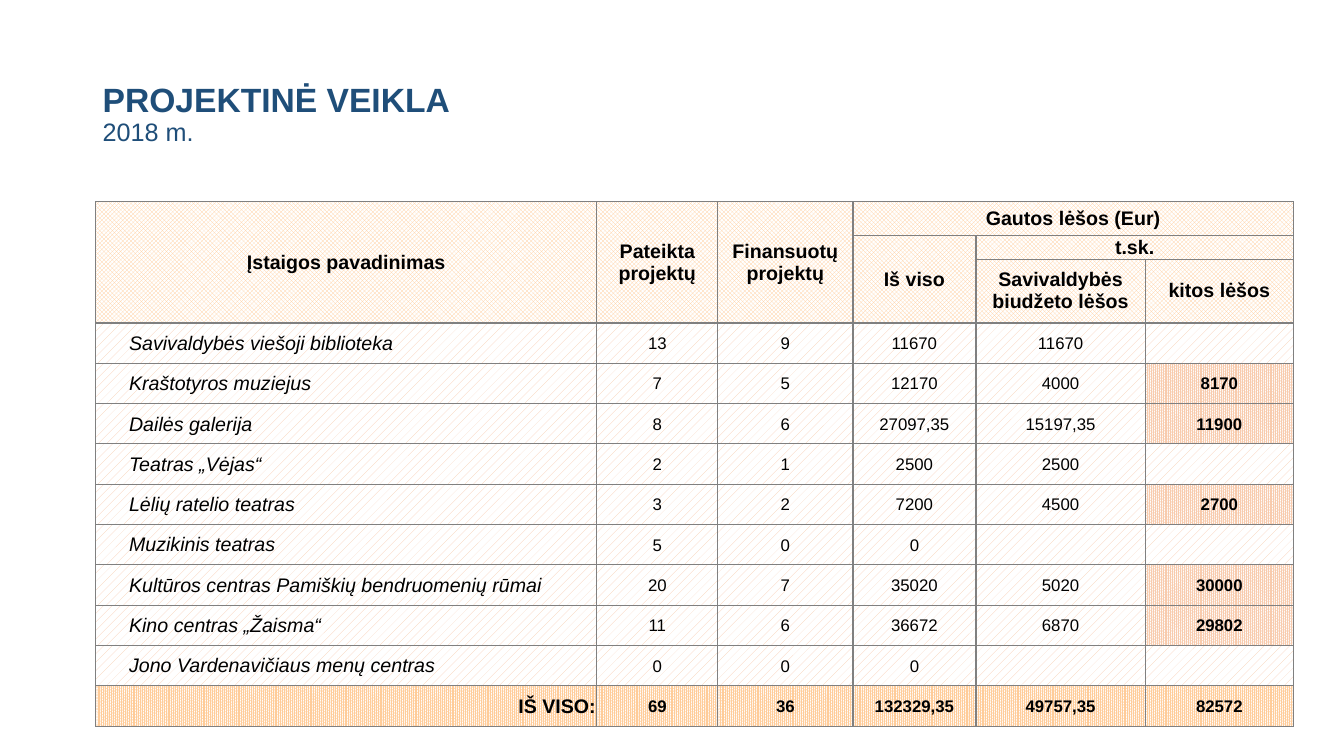
from pptx import Presentation
from pptx.dml.color import RGBColor
from pptx.enum.dml import MSO_PATTERN
from pptx.enum.text import MSO_ANCHOR, PP_ALIGN
from pptx.oxml import parse_xml
from pptx.oxml.ns import nsdecls
from pptx.util import Inches, Pt


def rgb(value):
    return RGBColor.from_string(value)


def write(p, text, size=14, color="000000", bold=False, italic=False, align=PP_ALIGN.LEFT):
    p.alignment = align
    r = p.add_run()
    r.text = text
    r.font.name = "Arial"
    r.font.size = Pt(size)
    r.font.bold = bold
    r.font.italic = italic
    r.font.color.rgb = rgb(color)


prs = Presentation()
prs.slide_width, prs.slide_height = Inches(13.33), Inches(7.5)
s = prs.slides.add_slide(prs.slide_layouts[6])

tf = s.shapes.add_textbox(Inches(0.92), Inches(0.42), Inches(11.5), Inches(1.45)).text_frame
tf.word_wrap = True
tf.vertical_anchor = MSO_ANCHOR.MIDDLE
p = tf.paragraphs[0]
p.line_spacing = 0.9
write(p, "PROJEKTINĖ VEIKLA", size=24, color="1F4E79", bold=True)
p.add_line_break()
write(p, "2018 m.", size=18, color="1F4E79")

header = [
    ["Įstaigos pavadinimas", "Pateikta projektų", "Finansuotų projektų", "Gautos lėšos (Eur)", "", ""],
    ["", "", "", "Iš viso", "t.sk.", ""],
    ["", "", "", "", "Savivaldybės biudžeto lėšos", "kitos lėšos"],
]
institutions = [
    ["Savivaldybės viešoji biblioteka", "13", "9", "11670", "11670", ""],
    ["Kraštotyros muziejus", "7", "5", "12170", "4000", "8170"],
    ["Dailės galerija", "8", "6", "27097,35", "15197,35", "11900"],
    ["Teatras „Vėjas“", "2", "1", "2500", "2500", ""],
    ["Lėlių ratelio teatras", "3", "2", "7200", "4500", "2700"],
    ["Muzikinis teatras", "5", "0", "0", "", ""],
    ["Kultūros centras Pamiškių bendruomenių rūmai", "20", "7", "35020", "5020", "30000"],
    ["Kino centras „Žaisma“", "11", "6", "36672", "6870", "29802"],
    ["Jono Vardenavičiaus menų centras", "0", "0", "0", "", ""],
]
total = ["IŠ VISO:", "69", "36", "132329,35", "49757,35", "82572"]
rows = header + institutions + [total]
widths = [4.97, 1.2, 1.34, 1.22, 1.68, 1.47]
heights = [0.34, 0.21, 0.63] + [0.4] * (len(institutions) + 1)

table = s.shapes.add_table(len(rows), len(widths), Inches(0.95), Inches(2),
                           Inches(sum(widths)), Inches(sum(heights))).table
table.first_row = table.horz_banding = False
for column, width in zip(table.columns, widths):
    column.width = Inches(width)
for row, height in zip(table.rows, heights):
    row.height = Inches(height)

for i, values in enumerate(rows):
    in_header = i < len(header)
    in_total = i == len(rows) - 1
    in_body = not in_header and not in_total
    for j, text in enumerate(values):
        cell = table.cell(i, j)
        is_name = in_body and j == 0
        is_other_funds = in_body and j == 5 and text != ""

        cell.vertical_anchor = MSO_ANCHOR.MIDDLE
        cell.margin_left = Inches(0.33 if is_name else 0.01)
        cell.margin_right = Inches(0.01)
        cell.margin_top = Inches(0 if in_header else 0.01)
        cell.margin_bottom = 0
        for side in "LRTB":
            cell._tc.get_or_add_tcPr().append(parse_xml(
                f'<a:ln{side} {nsdecls("a")} w="12700"><a:solidFill>'
                f'<a:srgbClr val="808080"/></a:solidFill></a:ln{side}>'))

        cell.fill.patterned()
        if in_header:
            cell.fill.pattern = MSO_PATTERN.TRELLIS
        elif in_total or is_other_funds:
            cell.fill.pattern = MSO_PATTERN.PERCENT_90
        else:
            cell.fill.pattern = MSO_PATTERN.PERCENT_20
        cell.fill.fore_color.rgb = rgb("F8CBAD" if in_body else "FFCC99")
        cell.fill.back_color.rgb = rgb("FFFFFF")

        if text:
            if is_name:
                align = PP_ALIGN.LEFT
            elif in_total and j == 0:
                align = PP_ALIGN.RIGHT
            else:
                align = PP_ALIGN.CENTER
            write(cell.text_frame.paragraphs[0], text, size=14 if in_header or j == 0 else 12,
                  bold=not in_body or is_other_funds, italic=is_name, align=align)

merges = [(0, 0, 2, 0), (0, 1, 2, 1), (0, 2, 2, 2), (0, 3, 0, 5), (1, 3, 2, 3), (1, 4, 1, 5)]
for top, left, bottom, right in merges:
    table.cell(top, left).merge(table.cell(bottom, right))

prs.save("out.pptx")
